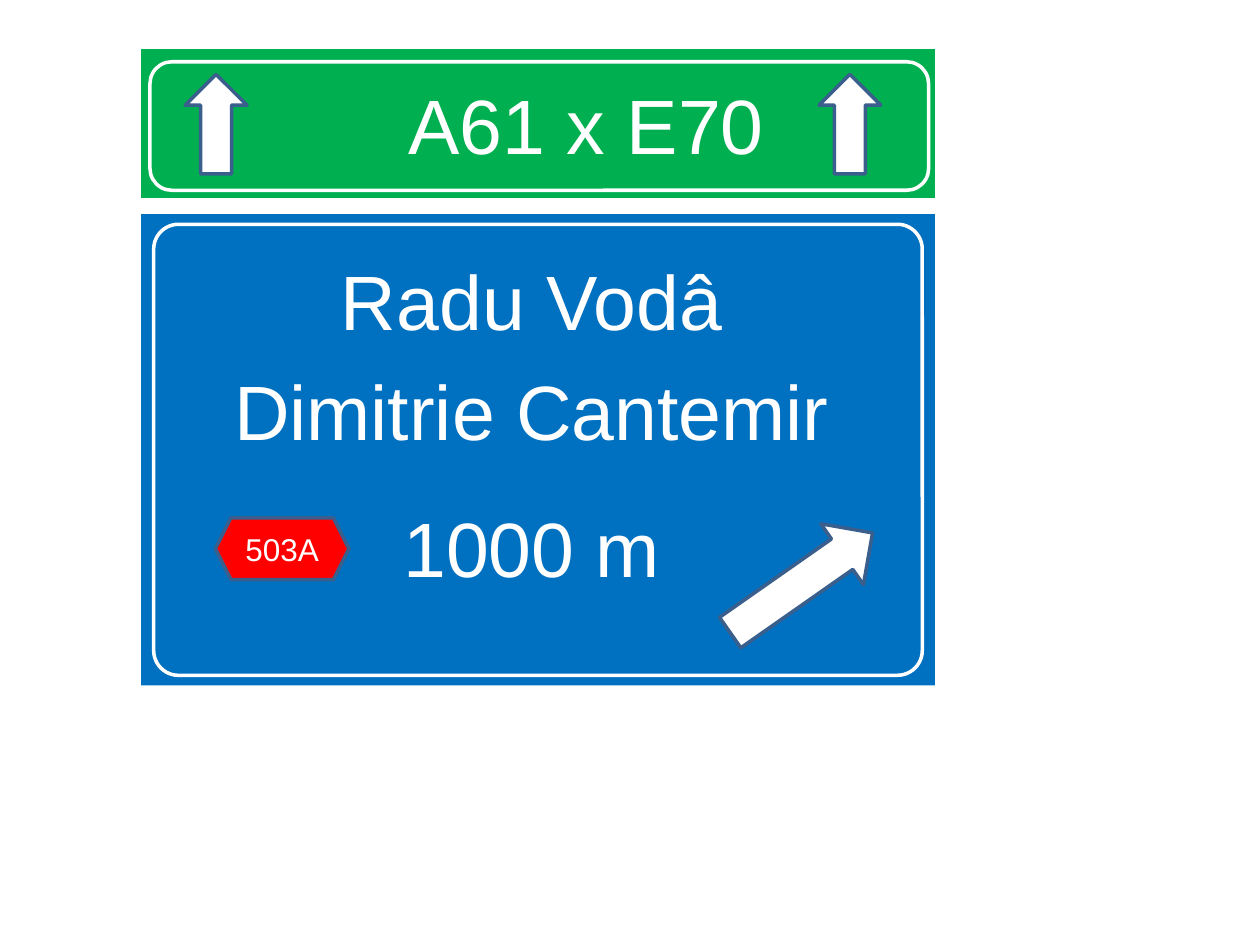
"""Build a slide showing a motorway exit sign."""
import pptx
import pptx.dml.color
import pptx.enum.shapes
import pptx.enum.text
import pptx.util

Inches = pptx.util.Inches
Shapes = pptx.enum.shapes.MSO_SHAPE
Anchor = pptx.enum.text.MSO_ANCHOR


def color(value):
    return pptx.dml.color.RGBColor.from_string(value)


def write(paragraph, text, size=44, font="Arial", fill="FFFFFF", before=0):
    paragraph.alignment = pptx.enum.text.PP_ALIGN.CENTER
    paragraph.space_before = pptx.util.Pt(before)
    run = paragraph.add_run()
    run.text = text
    run.font.size = pptx.util.Pt(size)
    run.font.name = font
    run.font.color.rgb = color(fill)


class Sign:
    white = "FFFFFF"
    outline = "3A5F8C"
    line_width = 2

    def __init__(self, slide):
        self.slide = slide

    def panel(self, index, box, fill, insets, anchor, lines):
        shape = self.slide.placeholders[index]
        shape.left, shape.top, shape.width, shape.height = map(Inches, box)
        shape.fill.solid()
        shape.fill.fore_color.rgb = color(fill)
        frame = shape.text_frame
        frame.word_wrap = True
        frame.auto_size = pptx.enum.text.MSO_AUTO_SIZE.NONE
        frame.vertical_anchor = anchor
        (frame.margin_left, frame.margin_top,
         frame.margin_right, frame.margin_bottom) = map(Inches, insets)
        for number, (text, before) in enumerate(lines):
            paragraph = frame.add_paragraph() if number else frame.paragraphs[0]
            write(paragraph, text, before=before)

    def shape(self, kind, box, fill=None, line=outline, rotation=0):
        shape = self.slide.shapes.add_shape(kind, *map(Inches, box))
        shape.shadow.inherit = False
        shape.rotation = rotation
        if fill:
            shape.fill.solid()
            shape.fill.fore_color.rgb = color(fill)
        else:
            shape.fill.background()
        shape.line.color.rgb = color(line)
        shape.line.width = pptx.util.Pt(self.line_width)
        return shape

    def arrow(self, kind, box, rotation=0):
        return self.shape(kind, box, fill=self.white, rotation=rotation)

    def border(self, box, radius):
        shape = self.shape(Shapes.ROUNDED_RECTANGLE, box, line=self.white)
        shape.adjustments[0] = radius

    def badge(self, box, text):
        shape = self.shape(Shapes.HEXAGON, box, fill="FF0000")
        frame = shape.text_frame
        frame.word_wrap = False
        frame.vertical_anchor = Anchor.MIDDLE
        write(frame.paragraphs[0], text, size=18)


def main():
    presentation = pptx.Presentation()
    presentation.slide_width = Inches(10)
    presentation.slide_height = Inches(7.5)
    sign = Sign(presentation.slides.add_slide(presentation.slide_layouts[0]))

    sign.panel(0, (1.12, 0.39, 6.3, 1.18), "00B050", (0.87, 0.05, 0.1, 0.05),
               Anchor.MIDDLE, [("A61 x E70", 0)])
    sign.panel(1, (1.12, 1.7, 6.3, 3.74), "0070C0", (0, 0.31, 0.1, 0.24), Anchor.TOP,
               [("Radu Vodâ", 5), ("Dimitrie Cantemir", 10), ("1000 m", 26)])
    sign.arrow(Shapes.RIGHT_ARROW, (5.67, 4.33, 1.38, 0.59), rotation=325)
    for left in (1.47, 6.5):
        sign.arrow(Shapes.UP_ARROW, (left, 0.59, 0.49, 0.79))
    sign.border((1.19, 0.49, 6.18, 1.02), 0.17)
    sign.border((1.22, 1.78, 6.1, 3.58), 0.055)
    sign.badge((1.71, 4.11, 1.06, 0.49), "503A")

    presentation.save("out.pptx")


if __name__ == "__main__":
    main()
